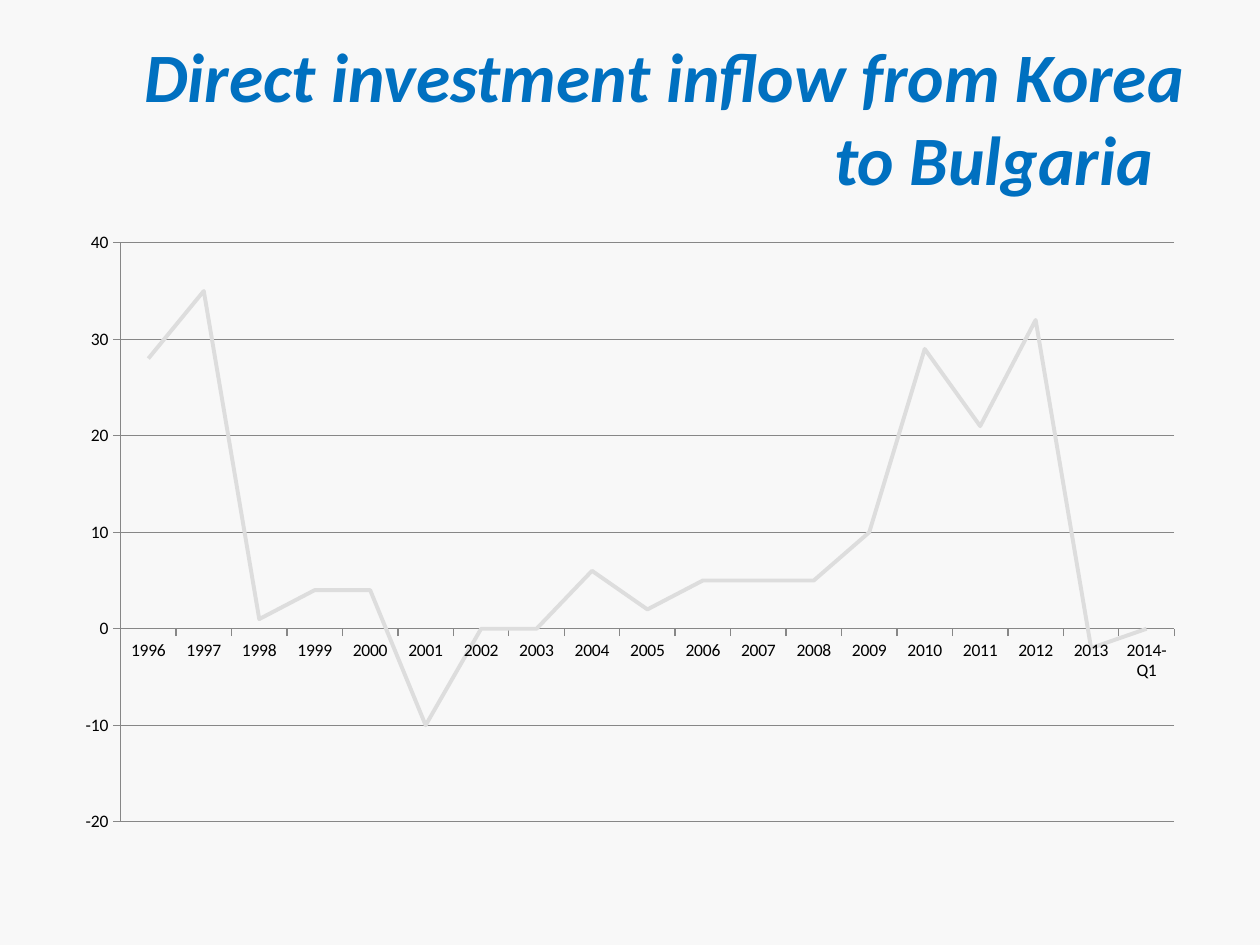
from pptx import Presentation, util as u
from pptx.chart.data import CategoryChartData
from pptx.dml.color import RGBColor
from pptx.enum import chart as ch, text

# Content
TITLE = "Direct investment inflow from Korea to Bulgaria  "
YEARS = [str(year) for year in range(1996, 2014)] + ["2014-Q1"]
INFLOW = [28, 35, 1, 4, 4, -10, 0, 0, 6, 2, 5, 5, 5, 10, 29, 21, 32, -2, 0]

FONT = "Calibri"
BACKGROUND = RGBColor(0xF8, 0xF8, 0xF8)
BLUE = RGBColor(0x00, 0x70, 0xC0)
BLACK = RGBColor(0, 0, 0)
AXIS_GREY = RGBColor(0x87, 0x87, 0x87)
LINE_GREY = RGBColor(0xDD, 0xDD, 0xDD)

prs = Presentation()
prs.slide_width, prs.slide_height = u.Inches(10), u.Inches(7.5)
W, H = prs.slide_width, prs.slide_height
left, width = int(W * 0.05), int(W * 0.9)

s = prs.slides.add_slide(prs.slide_layouts[5])
s.background.fill.solid()
s.background.fill.fore_color.rgb = BACKGROUND

# Title
sp = s.shapes.title
sp.left, sp.top, sp.width, sp.height = left, int(H * 0.04), width, u.Inches(1.25)
tf = sp.text_frame
tf.text = TITLE
tf.word_wrap = True
tf.auto_size = text.MSO_AUTO_SIZE.NONE
tf.vertical_anchor = text.MSO_ANCHOR.MIDDLE
p = tf.paragraphs[0]
p.alignment = text.PP_ALIGN.RIGHT
font = p.runs[0].font
font.name, font.size, font.bold, font.italic = FONT, u.Pt(39.6), True, True
font.color.rgb = BLUE

# Line chart
data = CategoryChartData()
data.categories = YEARS
data.add_series("Series 1", INFLOW)
chart = s.shapes.add_chart(ch.XL_CHART_TYPE.LINE, left, u.Inches(1.75),
                           width, int(H * 0.66), data).chart
chart.has_legend = False
chart.has_title = False
chart.font.name, chart.font.size = FONT, u.Pt(10)
chart.font.color.rgb = BLACK

plot = chart.plots[0]
plot.vary_by_categories = False
series = plot.series[0]
series.smooth = False
series.marker.style = ch.XL_MARKER_STYLE.NONE
series.format.line.color.rgb = LINE_GREY
series.format.line.width = u.Pt(2.25)

# Axes and gridlines
years, values = chart.category_axis, chart.value_axis
values.minimum_scale, values.maximum_scale, values.major_unit = -20, 40, 10
values.has_major_gridlines = True
for axis in (years, values):
    axis.major_tick_mark = ch.XL_TICK_MARK.OUTSIDE
    axis.tick_label_position = ch.XL_TICK_LABEL_POSITION.NEXT_TO_AXIS
for part in (years, values, values.major_gridlines):
    part.format.line.color.rgb = AXIS_GREY
    part.format.line.width = u.Pt(0.75)

prs.save("out.pptx")
